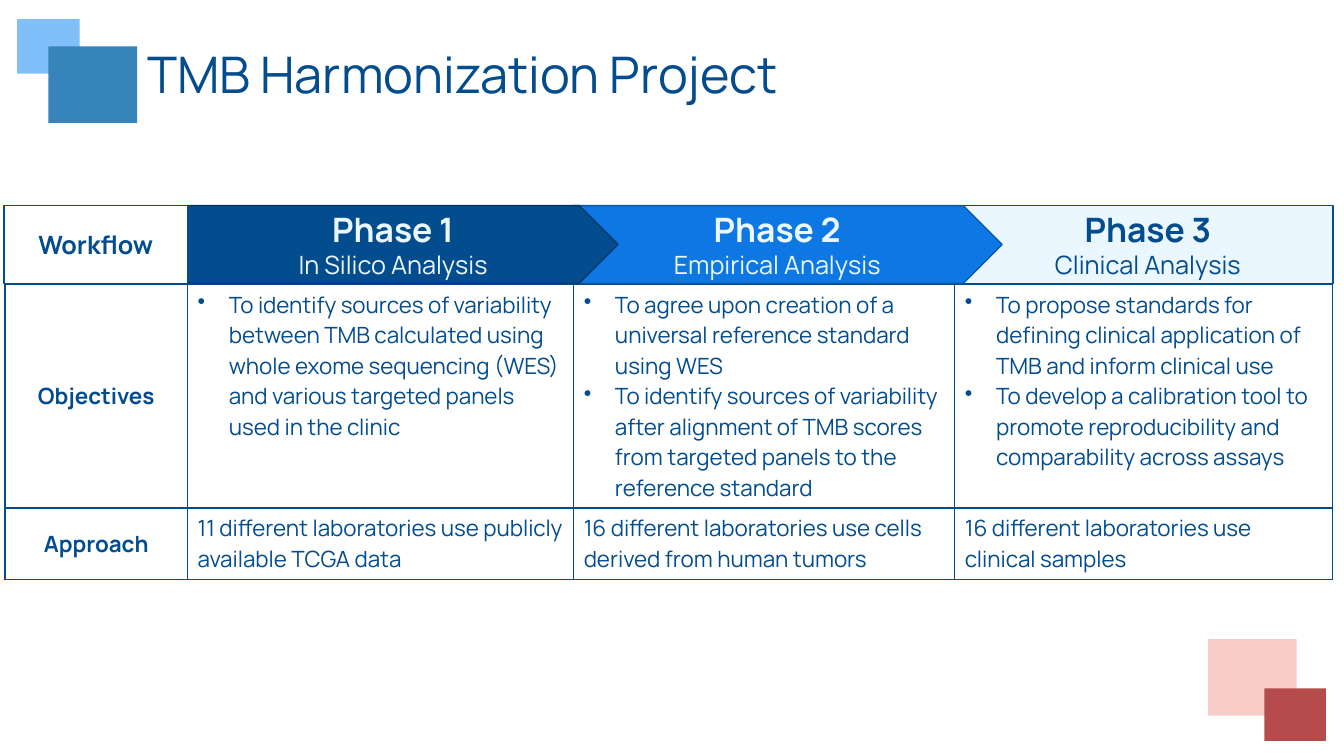
from lxml import etree
from pptx import Presentation
from pptx.dml.color import RGBColor
from pptx.enum.shapes import MSO_SHAPE
from pptx.enum.text import MSO_ANCHOR, PP_ALIGN
from pptx.oxml.ns import qn
from pptx.util import Emu, Pt

PX = 9144  # 100 px to the inch
RECT, PENTAGON = MSO_SHAPE.RECTANGLE, MSO_SHAPE.PENTAGON
MIDDLE, TOP = MSO_ANCHOR.MIDDLE, MSO_ANCHOR.TOP
CENTER, LEFT = PP_ALIGN.CENTER, PP_ALIGN.LEFT

COLORS = {
    "navy": "034C8E", "navy_edge": "023869", "blue": "0D78E3", "blue_edge": "0A59A8",
    "ice": "EBF7FF", "white": "FFFFFF", "sky": "81BFFB", "steel": "3783BC",
    "rose": "F9CDC7", "brick": "B54B4B",
}
FORMATS = {
    "title": {"size": Pt(36), "bold": False},
    "phase": {"size": Pt(24), "bold": True},
    "subtitle": {"size": Pt(18), "bold": False},
    "workflow": {"size": Pt(18), "bold": True},
    "row_head": {"size": Pt(16), "bold": True},
    "body": {"size": Pt(16), "bold": False},
}

# Decorative squares: left, top, width, height, fill
SQUARES = [
    (17, 19, 62, 54, "sky"),
    (48, 46, 88, 76, "steel"),
    (1198, 634, 88, 76, "rose"),
    (1254, 683, 61, 52, "brick"),
]
# Header band: left, width, point, fill, edge, text colour, lines
HEADERS = [
    (955, 367, 0, "ice", "navy", "navy", [("Phase 3", "phase"), ("Clinical Analysis", "subtitle")]),
    (567, 427, 0.5, "blue", "blue_edge", "ice", [("Phase 2", "phase"), ("Empirical Analysis", "subtitle")]),
    (186, 427, 0.5, "navy", "navy_edge", "ice", [("Phase 1", "phase"), ("In Silico Analysis", "subtitle")]),
    (4, 182, 0, "white", "navy", "navy", [("Workflow", "workflow")]),
]
COL_WIDTHS = [181, 383, 378, 375]
ROW_HEIGHTS = [222, 71]
# Each row: heading, bulleted or not, paragraphs of each phase
ROWS = [
    ("Objectives", True, [
        ["To identify sources of variability between TMB calculated using whole exome "
         "sequencing (WES) and various targeted panels used in the clinic"],
        ["To agree upon creation of a universal reference standard using WES",
         "To identify sources of variability after alignment of TMB scores from targeted "
         "panels to the reference standard"],
        ["To propose standards for defining clinical application of TMB and inform clinical use",
         "To develop a calibration tool to promote reproducibility and comparability across assays"],
    ]),
    ("Approach", False, [
        ["11 different laboratories use publicly available TCGA data"],
        ["16 different laboratories use cells derived from human tumors"],
        ["16 different laboratories use clinical samples"],
    ]),
]


def rgb(name):
    return RGBColor.from_string(COLORS[name])


def box(*lengths):
    return [Emu(n * PX) for n in lengths]


def add_bullet(p):
    pPr = p._p.get_or_add_pPr()
    pPr.set("marL", str(31 * PX))
    pPr.set("indent", str(-31 * PX))
    etree.SubElement(pPr, qn("a:buChar")).set("char", "•")


def write(tf, lines, color, align=LEFT, bullets=False):
    """Fill a text frame with (text, format) lines."""
    for i, (text, fmt) in enumerate(lines):
        p = tf.add_paragraph() if i else tf.paragraphs[0]
        p.alignment = align
        if bullets:
            add_bullet(p)
        r = p.add_run()
        r.text = text
        r.font.name = "Manrope"
        r.font.color.rgb = rgb(color)
        for key, value in FORMATS[fmt].items():
            setattr(r.font, key, value)


def add_block(s, kind, place, fill, edge=None):
    sp = s.shapes.add_shape(kind, *box(*place))
    sp.shadow.inherit = False
    sp.fill.solid()
    sp.fill.fore_color.rgb = rgb(fill)
    if edge:
        sp.line.color.rgb = rgb(edge)
        sp.line.width = Pt(1)
    else:
        sp.line.fill.background()
    return sp


def add_title(s, text):
    tf = s.shapes.add_textbox(*box(136, 34, 1105, 86)).text_frame
    tf.word_wrap = True
    tf.vertical_anchor = MIDDLE
    write(tf, [(text, "title")], "navy")
    tf.paragraphs[0].line_spacing = 0.9


def add_header(s, left, width, point, fill, edge, color, lines):
    sp = add_block(s, PENTAGON, (left, 204, width, 77), fill, edge)
    sp.adjustments[0] = point
    tf = sp.text_frame
    tf.word_wrap = True
    tf.vertical_anchor = MIDDLE
    write(tf, lines, color, CENTER)


def style_cell(cell):
    # Borders come before the fill in the cell properties
    tcPr = cell._tc.get_or_add_tcPr()
    for side in ("lnL", "lnR", "lnT", "lnB"):
        ln = etree.SubElement(tcPr, qn(f"a:{side}"), w=str(Pt(1)))
        solid = etree.SubElement(ln, qn("a:solidFill"))
        etree.SubElement(solid, qn("a:srgbClr"), val=COLORS["navy"])
    cell.fill.solid()
    cell.fill.fore_color.rgb = rgb("white")


def add_phase_table(s):
    place = box(5, 282, sum(COL_WIDTHS), sum(ROW_HEIGHTS))
    table = s.shapes.add_table(len(ROWS), len(COL_WIDTHS), *place).table
    table.first_row = table.horz_banding = False
    for col, width in zip(table.columns, COL_WIDTHS):
        col.width = Emu(width * PX)
    for row, height, (heading, bullets, phases) in zip(table.rows, ROW_HEIGHTS, ROWS):
        row.height = Emu(height * PX)
        head, *cells = row.cells
        style_cell(head)
        head.vertical_anchor = MIDDLE
        write(head.text_frame, [(heading, "row_head")], "navy", CENTER)
        for cell, texts in zip(cells, phases):
            style_cell(cell)
            cell.vertical_anchor = TOP
            write(cell.text_frame, [(t, "body") for t in texts], "navy", bullets=bullets)


def main():
    prs = Presentation()
    prs.slide_width, prs.slide_height = box(1333, 750)
    s = prs.slides.add_slide(prs.slide_layouts[6])

    # Corner squares and title
    for *place, fill in SQUARES:
        add_block(s, RECT, place, fill)
    add_title(s, "TMB Harmonization Project")

    # Table, then the header arrows from right to left so each overlaps the next
    add_phase_table(s)
    for header in HEADERS:
        add_header(s, *header)

    prs.save("out.pptx")


if __name__ == "__main__":
    main()
